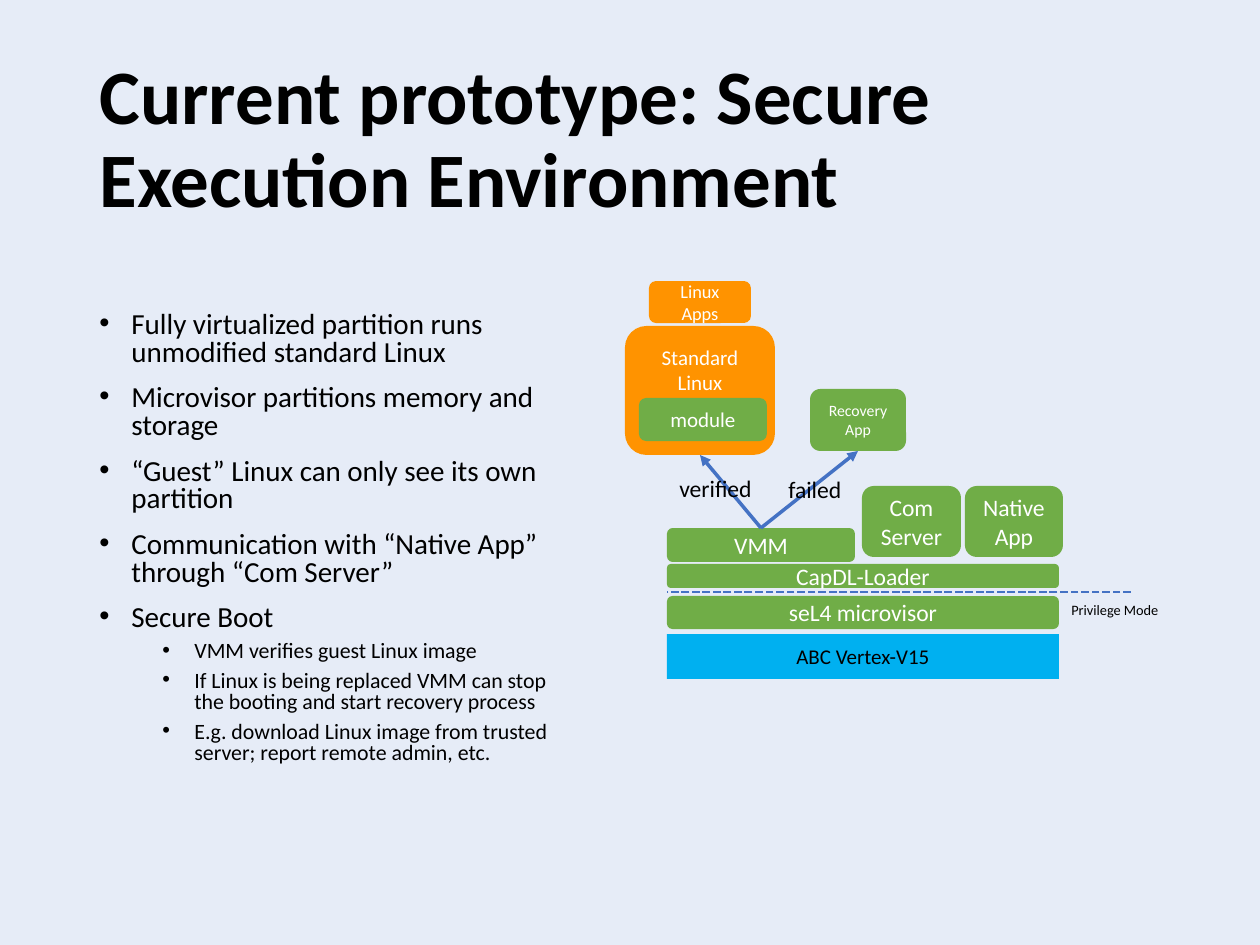
import pptx
import pptx.dml.color
import pptx.enum.dml
import pptx.enum.shapes
import pptx.enum.text
import pptx.oxml.ns
import pptx.util
from lxml import etree

RGB = pptx.dml.color.RGBColor
BACKGROUND = RGB(0xE6, 0xEC, 0xF7)
BLACK = RGB(0x00, 0x00, 0x00)
WHITE = RGB(0xFF, 0xFF, 0xFF)
GREEN = RGB(0x70, 0xAD, 0x47)
ORANGE = RGB(0xFF, 0x93, 0x00)
SKY = RGB(0x00, 0xB0, 0xF0)
BLUE = RGB(0x44, 0x72, 0xC4)

FONT = "Calibri"
ALIGN = pptx.enum.text.PP_ALIGN
ANCHOR = pptx.enum.text.MSO_ANCHOR
SHAPE = pptx.enum.shapes.MSO_SHAPE
TOP, BOTTOM = 0, 2

BULLETS = [
    (0, "Fully virtualized partition runs unmodified standard Linux"),
    (0, "Microvisor partitions memory and storage"),
    (0, "“Guest” Linux can only see its own partition"),
    (0, "Communication with “Native App” through “Com Server”"),
    (0, "Secure Boot"),
    (1, "VMM verifies guest Linux image"),
    (1, "If Linux is being replaced VMM can stop the booting and start recovery process"),
    (1, "E.g. download Linux image from trusted server; report remote admin, etc."),
]
# Per level: text size, space before, left margin in px
LEVELS = [(16.6, 10, 32), (12.5, 5, 95)]
HANGING = 32


def px(length):
    return pptx.util.Emu(length * 914400 // 126)


def set_font(paragraph, size, color, bold=False):
    font = paragraph.font
    font.name = FONT
    font.size = pptx.util.Pt(size)
    font.bold = bold
    font.color.rgb = color


def add_title(slide, left, top, width, height):
    title = slide.shapes.title
    title.left, title.top, title.width, title.height = map(px, (left, top, width, height))
    frame = title.text_frame
    frame.text = "Current prototype: Secure Execution Environment"
    frame.auto_size = pptx.enum.text.MSO_AUTO_SIZE.NONE
    frame.vertical_anchor = ANCHOR.MIDDLE
    heading = frame.paragraphs[0]
    heading.alignment = ALIGN.LEFT
    heading.line_spacing = 0.9
    set_font(heading, 44, BLACK, bold=True)


def add_bullets(slide, left, top, width, height):
    frame = slide.shapes.add_textbox(px(left), px(top), px(width), px(height)).text_frame
    frame.word_wrap = True
    for index, (level, text) in enumerate(BULLETS):
        size, space, margin = LEVELS[level]
        point = frame.add_paragraph() if index else frame.paragraphs[0]
        point.text = text
        point.level = level
        point.line_spacing = 0.8
        point.space_before = pptx.util.Pt(space if index else 0)
        properties = point._p.get_or_add_pPr()
        properties.set("marL", str(px(margin)))
        properties.set("indent", str(-px(HANGING)))
        etree.SubElement(properties, pptx.oxml.ns.qn("a:buFont"), typeface="Arial")
        etree.SubElement(properties, pptx.oxml.ns.qn("a:buChar"), char="•")
        set_font(point, size, BLACK)


def add_block(slide, box, text, size, fill, color=WHITE, kind=SHAPE.ROUNDED_RECTANGLE):
    block = slide.shapes.add_shape(kind, *map(px, box))
    block.shadow.inherit = False
    block.fill.solid()
    block.fill.fore_color.rgb = fill
    block.line.fill.background()
    frame = block.text_frame
    frame.word_wrap = True
    frame.vertical_anchor = ANCHOR.MIDDLE
    frame.text = text
    for paragraph in frame.paragraphs:
        paragraph.alignment = ALIGN.CENTER
        set_font(paragraph, size, color)
    return block


def add_label(slide, box, text, size):
    frame = slide.shapes.add_textbox(*map(px, box)).text_frame
    frame.word_wrap = False
    frame.text = text
    set_font(frame.paragraphs[0], size, BLACK)


def add_line(slide, start, end, width):
    line = slide.shapes.add_connector(
        pptx.enum.shapes.MSO_CONNECTOR.STRAIGHT, *map(px, start + end))
    line.line.color.rgb = BLUE
    line.line.width = pptx.util.Pt(width)
    etree.SubElement(line._element.spPr, pptx.oxml.ns.qn("a:effectLst"))
    return line


def add_boot_arrow(slide, source, target):
    arrow = add_line(slide, (0, 0), (0, 0), 2)
    arrow.begin_connect(source, TOP)
    arrow.end_connect(target, BOTTOM)
    etree.SubElement(arrow.line._get_or_add_ln(), pptx.oxml.ns.qn("a:tailEnd"), type="triangle")


def add_architecture(slide, left, top):
    def at(x, y, width, height):
        return left + x, top + y, width, height

    # Layers of the platform, bottom up
    stack_left, stack_width = 42, 392
    add_block(slide, at(stack_left, 353, stack_width, 45), "ABC Vertex-V15", 12,
              SKY, BLACK, SHAPE.RECTANGLE)
    add_block(slide, at(stack_left, 315, stack_width, 33), "seL4 microvisor", 13.5, GREEN)
    border = add_line(slide, (left + 506, top + 311), (left + stack_left, top + 311), 1.5)
    border.line.dash_style = pptx.enum.dml.MSO_LINE.SQUARE_DOT
    add_block(slide, at(stack_left, 283, stack_width, 24), "CapDL-Loader", 13.5, GREEN)
    vmm = add_block(slide, at(stack_left, 247, 188, 34), "VMM", 13.5, GREEN)

    # Native components
    add_block(slide, at(340, 205, 98, 71), "Native App", 13.5, GREEN)
    add_block(slide, at(237, 205, 99, 71), "Com\nServer", 13.5, GREEN)

    # Guest system
    guest = add_block(slide, at(0, 45, 150, 129), "Standard\nLinux", 12, ORANGE)
    guest.text_frame.vertical_anchor = ANCHOR.TOP
    guest.text_frame.margin_top = px(12)
    add_block(slide, at(24, 0, 102, 42), "Linux Apps", 10.5, ORANGE)
    add_block(slide, at(14, 117, 128, 43), "module", 12, GREEN)
    recovery = add_block(slide, at(185, 108, 96, 62), "Recovery App", 9, GREEN)

    # Boot outcomes
    add_boot_arrow(slide, vmm, guest)
    add_boot_arrow(slide, vmm, recovery)
    add_label(slide, at(42, 187, 99, 41), "verified", 13.5)
    add_label(slide, at(151, 188, 79, 41), "failed", 13.5)
    add_label(slide, at(434, 314, 115, 30), "Privilege Mode", 8.2)


def main():
    deck = pptx.Presentation()
    deck.slide_width, deck.slide_height = px(1260), px(945)
    slide = deck.slides.add_slide(deck.slide_layouts[5])
    slide.background.fill.solid()
    slide.background.fill.fore_color.rgb = BACKGROUND
    add_title(slide, 87, 50, 1086, 183)
    add_bullets(slide, 87, 306, 496, 478)
    add_architecture(slide, 625, 281)
    deck.save("out.pptx")


if __name__ == "__main__":
    main()
